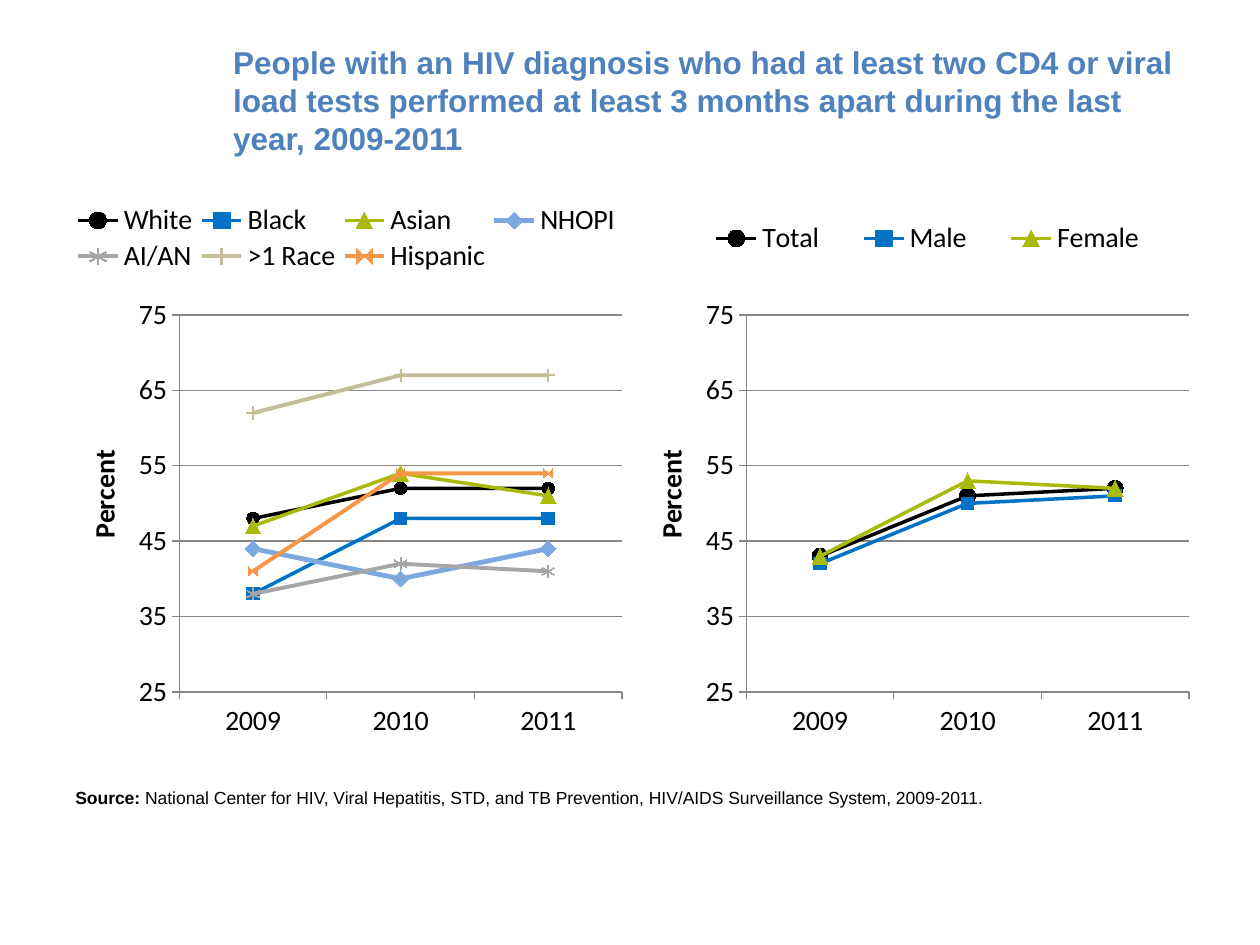
from dataclasses import dataclass

import pptx
import pptx.chart.data
import pptx.dml.color
import pptx.enum.chart
import pptx.enum.text
import pptx.oxml
import pptx.oxml.ns
import pptx.util

In, Pt = pptx.util.Inches, pptx.util.Pt
MARK = pptx.enum.chart.XL_MARKER_STYLE


@dataclass(frozen=True)
class Theme:
    title: str = "4F81BD"
    text: str = "000000"
    grid: str = "868686"
    black: str = "000000"
    blue: str = "0072C6"
    green: str = "AABA0A"
    sky: str = "7BA8DF"
    grey: str = "A6A6A6"
    tan: str = "C4BD97"
    orange: str = "F79646"
    font: str = "Arial"
    chart_font: str = "Calibri"
    title_pt: float = 18
    chart_pt: float = 16
    source_pt: float = 10


T = Theme()
WIDTH, HEIGHT = 10, 7.5
MARGIN = 0.5
COL = (WIDTH - 2 * MARGIN) / 2  # two equal chart columns
YEARS = ["2009", "2010", "2011"]
PLOT = (0.205, 0.2, 0.781, 0.665)

# name, values, colour, line width, marker style, marker size, marker filled
RACE = [
    ("White", (48, 52, 52), T.black, 2, MARK.CIRCLE, 7, True),
    ("Black", (38, 48, 48), T.blue, 2, MARK.SQUARE, 7, True),
    ("Asian", (47, 54, 51), T.green, 2, MARK.TRIANGLE, 9, True),
    ("NHOPI", (44, 40, 44), T.sky, 2.75, MARK.DIAMOND, 9, True),
    ("AI/AN", (38, 42, 41), T.grey, 2.25, MARK.STAR, 7, False),
    (">1 Race", (62, 67, 67), T.tan, 2.25, MARK.PLUS, 7, False),
    ("Hispanic", (41, 54, 54), T.orange, 2.25, None, None, False),
]
SEX = [
    ("Total", (43, 51, 52), T.black, 2, MARK.CIRCLE, 9, True),
    ("Male", (42, 50, 51), T.blue, 2, MARK.SQUARE, 7, True),
    ("Female", (43, 53, 52), T.green, 2, MARK.TRIANGLE, 9, True),
]


def rgb(color):
    return pptx.dml.color.RGBColor.from_string(color)


def style_font(font, size, color=T.text, name=T.font, bold=False):
    font.size, font.name, font.bold = Pt(size), name, bold
    font.color.rgb = rgb(color)


def add_text(p, text, **fmt):
    r = p.add_run()
    r.text = text
    style_font(r.font, **fmt)


def set_layout(parent, index, x, y, w=None, h=None, inner=False):
    """Give a chart part a manual place, as shares of the chart's size."""
    for old in parent.findall(pptx.oxml.ns.qn("c:layout")):
        parent.remove(old)
    items = [("layoutTarget", "inner")] if inner else []
    items += [("xMode", "edge"), ("yMode", "edge"), ("x", x), ("y", y)]
    if w is not None:
        items += [("w", w), ("h", h)]
    body = "".join(f'<c:{tag} val="{val}"/>' for tag, val in items)
    parent.insert(index, pptx.oxml.parse_xml(
        f'<c:layout {pptx.oxml.ns.nsdecls("c")}>'
        f'<c:manualLayout>{body}</c:manualLayout></c:layout>'))


def style_series(ser, color, width, marker, size, filled):
    ser.smooth = False
    ser.format.line.color.rgb = rgb(color)
    ser.format.line.width = Pt(width)
    if marker is None:
        return
    ser.marker.style, ser.marker.size = marker, size
    fmt = ser.marker.format
    fmt.line.color.rgb = rgb(color)
    if filled:
        fmt.fill.solid()
        fmt.fill.fore_color.rgb = rgb(color)
    else:
        fmt.fill.background()


def style_axes(chart):
    cat, val = chart.category_axis, chart.value_axis
    for axis in (cat, val):
        style_font(axis.tick_labels.font, T.chart_pt, name=T.chart_font)
        axis.major_tick_mark = pptx.enum.chart.XL_TICK_MARK.OUTSIDE
        axis.minor_tick_mark = pptx.enum.chart.XL_TICK_MARK.NONE
        axis.format.line.color.rgb = rgb(T.grid)
    cat.has_major_gridlines = False
    val.minimum_scale, val.maximum_scale, val.major_unit = 25, 75, 10
    val.has_major_gridlines = True
    val.major_gridlines.format.line.color.rgb = rgb(T.grid)
    val.tick_labels.number_format = "0"
    val.tick_labels.number_format_is_linked = False
    val.has_title = True
    add_text(val.axis_title.text_frame.paragraphs[0], "Percent",
             size=T.chart_pt, name=T.chart_font, bold=True)
    set_layout(val.axis_title._element, 1, 0.03, 0.43)


def add_line_chart(s, box, rows, legend_box):
    data = pptx.chart.data.CategoryChartData(number_format="0")
    data.categories = YEARS
    for name, values, *_ in rows:
        data.add_series(name, values)
    chart = s.shapes.add_chart(pptx.enum.chart.XL_CHART_TYPE.LINE_MARKERS,
                               *map(In, box), data).chart
    chart.has_title = False
    style_font(chart.font, T.source_pt)
    chart.plots[0].vary_by_categories = False
    for ser, row in zip(chart.plots[0].series, rows):
        style_series(ser, *row[2:])
    style_axes(chart)

    # Legend above the plot
    chart.has_legend = True
    legend = chart.legend
    legend.position = pptx.enum.chart.XL_LEGEND_POSITION.TOP
    legend.include_in_layout = False
    style_font(legend.font, T.chart_pt, name=T.chart_font)
    set_layout(legend._element, 1, *legend_box)
    set_layout(chart._chartSpace.chart.plotArea, 0, *PLOT, inner=True)


def add_title(s, box, text):
    sp = s.shapes.title
    sp.left, sp.top, sp.width, sp.height = map(In, box)
    tf = sp.text_frame
    tf.word_wrap = True
    tf.auto_size = pptx.enum.text.MSO_AUTO_SIZE.NONE
    tf.vertical_anchor = pptx.enum.text.MSO_ANCHOR.MIDDLE
    p = tf.paragraphs[0]
    p.alignment = pptx.enum.text.PP_ALIGN.LEFT
    add_text(p, text, size=T.title_pt, color=T.title, bold=True)


def add_source(s, box, label, text):
    tf = s.shapes.add_textbox(*map(In, box)).text_frame
    tf.word_wrap = True
    tf.auto_size = pptx.enum.text.MSO_AUTO_SIZE.SHAPE_TO_FIT_TEXT
    p = tf.paragraphs[0]
    add_text(p, label, size=T.source_pt, bold=True)
    add_text(p, text, size=T.source_pt)


def main():
    prs = pptx.Presentation()
    prs.slide_width, prs.slide_height = In(WIDTH), In(HEIGHT)
    s = prs.slides.add_slide(prs.slide_layouts.get_by_name("Title Only"))
    add_title(s, (1.75, 0.17, 7.75, 1.25),
              "People with an HIV diagnosis who had at least two CD4 or viral "
              "load tests performed at least 3 months apart during the last "
              "year, 2009-2011")

    # Charts side by side: by race, by sex
    charts = [(RACE, (0.01, 0, 0.98, 0.13)), (SEX, (0.09, 0.02, 0.87, 0.09))]
    for i, (rows, legend_box) in enumerate(charts):
        add_line_chart(s, (MARGIN + i * COL, 1.6, COL, COL), rows, legend_box)

    add_source(s, (MARGIN, 6.2, 8.1, 0.27), "Source: ",
               "National Center for HIV, Viral Hepatitis, STD, and TB "
               "Prevention, HIV/AIDS Surveillance System, 2009-2011.")
    prs.save("out.pptx")


if __name__ == "__main__":
    main()
